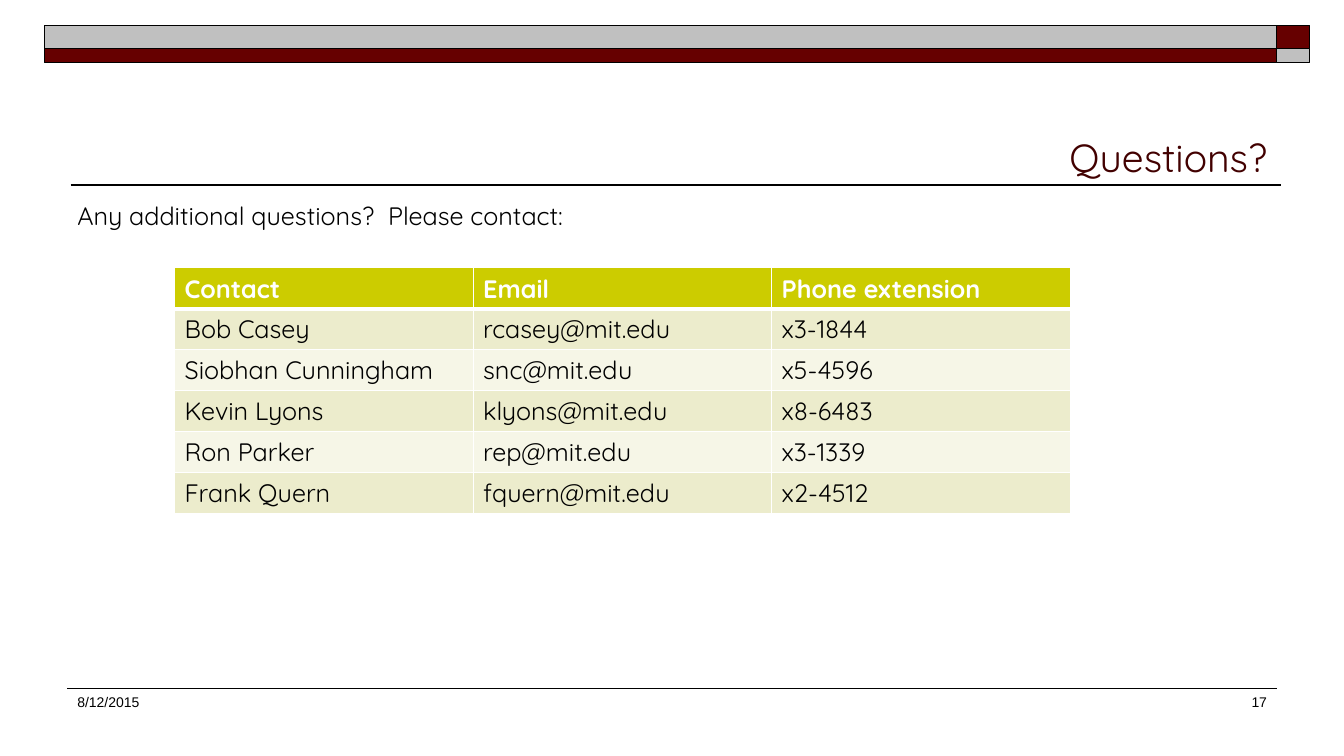
from lxml.etree import SubElement
from pptx import Presentation
from pptx.dml.color import RGBColor
from pptx.enum.shapes import MSO_CONNECTOR, MSO_SHAPE
from pptx.enum.text import MSO_ANCHOR, PP_ALIGN
from pptx.oxml.ns import qn
from pptx.util import Cm, Pt

BLACK = RGBColor(0x00, 0x00, 0x00)
WHITE = RGBColor(0xFF, 0xFF, 0xFF)
MAROON = RGBColor(0x66, 0x00, 0x00)
DARK_MAROON = RGBColor(0x42, 0x00, 0x00)
SILVER = RGBColor(0xC0, 0xC0, 0xC0)
OLIVE = RGBColor(0xCC, 0xCC, 0x00)
BAND_DARK = RGBColor(0xEC, 0xEC, 0xCC)
BAND_LIGHT = RGBColor(0xF6, 0xF6, 0xE7)

BODY_FONT = "Quicksand"
FOOTER_FONT = "Arial"

CONTACTS = [
    ("Contact", "Email", "Phone extension"),
    ("Bob Casey", "rcasey@mit.edu", "x3-1844"),
    ("Siobhan Cunningham", "snc@mit.edu", "x5-4596"),
    ("Kevin Lyons", "klyons@mit.edu", "x8-6483"),
    ("Ron Parker", "rep@mit.edu", "x3-1339"),
    ("Frank Quern", "fquern@mit.edu", "x2-4512"),
]


def write_text(frame, text, font=BODY_FONT, size=18, color=BLACK, bold=False,
               align=PP_ALIGN.LEFT, line_spacing=None):
    para = frame.paragraphs[0]
    para.alignment = align
    para.line_spacing = line_spacing
    span = para.add_run()
    span.text = text
    span.font.name = font
    span.font.size = Pt(size)
    span.font.bold = bold
    span.font.color.rgb = color


def add_text(page, text, left, top, width, height, anchor=MSO_ANCHOR.TOP,
             **text_format):
    box = page.shapes.add_textbox(Cm(left), Cm(top), Cm(width), Cm(height))
    box.text_frame.word_wrap = True
    box.text_frame.vertical_anchor = anchor
    write_text(box.text_frame, text, **text_format)


def add_bar(page, left, top, width, height, color):
    bar = page.shapes.add_shape(MSO_SHAPE.RECTANGLE, Cm(left), Cm(top),
                                Cm(width), Cm(height))
    bar.shadow.inherit = False
    bar.fill.solid()
    bar.fill.fore_color.rgb = color
    bar.line.color.rgb = BLACK
    bar.line.width = Pt(1)


def add_rule(page, left, right, top, weight):
    rule = page.shapes.add_connector(MSO_CONNECTOR.STRAIGHT, Cm(left), Cm(top),
                                     Cm(right), Cm(top))
    rule.line.color.rgb = BLACK
    rule.line.width = Pt(weight)
    SubElement(rule._element.spPr, qn("a:effectLst"))


def add_header_band(page):
    columns = [(1.12, 31.05), (32.17, 0.84)]
    rows = [(0.64, 0.58), (1.22, 0.36)]
    for row, (top, height) in enumerate(rows):
        for column, (left, width) in enumerate(columns):
            color = SILVER if row == column else MAROON
            add_bar(page, left, top, width, height, color)


def set_borders(cell, **weights):
    properties = cell._tc.get_or_add_tcPr()
    for side in ("L", "R", "T", "B"):
        width = Pt(weights.get(side, 1))
        border = SubElement(properties, qn(f"a:ln{side}"), w=str(width))
        fill = SubElement(border, qn("a:solidFill"))
        SubElement(fill, qn("a:srgbClr"), val=str(WHITE))


def add_contact_table(page, rows, left, top, width, row_height):
    frame = page.shapes.add_table(len(rows), len(rows[0]), Cm(left), Cm(top),
                                  Cm(width), Cm(row_height * len(rows)))
    table = frame.table
    for row, values in enumerate(rows):
        is_header = row == 0
        band = BAND_DARK if row % 2 else BAND_LIGHT
        for column, value in enumerate(values):
            cell = table.cell(row, column)
            # A thick edge parts the header from the contacts
            set_borders(cell, B=3 if is_header else 1, T=3 if row == 1 else 1)
            cell.fill.solid()
            cell.fill.fore_color.rgb = OLIVE if is_header else band
            write_text(cell.text_frame, value, bold=is_header,
                       color=WHITE if is_header else BLACK)


def main():
    deck = Presentation()
    deck.slide_width = Cm(33.87)
    deck.slide_height = Cm(19.05)
    page = deck.slides.add_slide(deck.slide_layouts[6])

    # Header band and title
    add_rule(page, 1.78, 32.28, 4.66, 1)
    add_header_band(page)
    add_text(page, "Questions?", 1.7, 1.48, 30.48, 3.18, size=28,
             color=DARK_MAROON, align=PP_ALIGN.RIGHT, anchor=MSO_ANCHOR.BOTTOM)

    # Contacts
    add_text(page, "Any additional questions?  Please contact:",
             1.7, 5.08, 30.48, 1.2, line_spacing=0.8)
    add_contact_table(page, CONTACTS, 4.4, 6.75, 22.57, 1.03)

    # Footer
    add_rule(page, 1.7, 32.17, 17.36, 0.75)
    add_text(page, "8/12/2015", 1.7, 17.36, 6.2, 1.27, font=FOOTER_FONT, size=10)
    add_text(page, "17", 25.12, 17.36, 7.06, 1.27, font=FOOTER_FONT, size=10,
             align=PP_ALIGN.RIGHT)

    deck.save("out.pptx")


if __name__ == "__main__":
    main()
